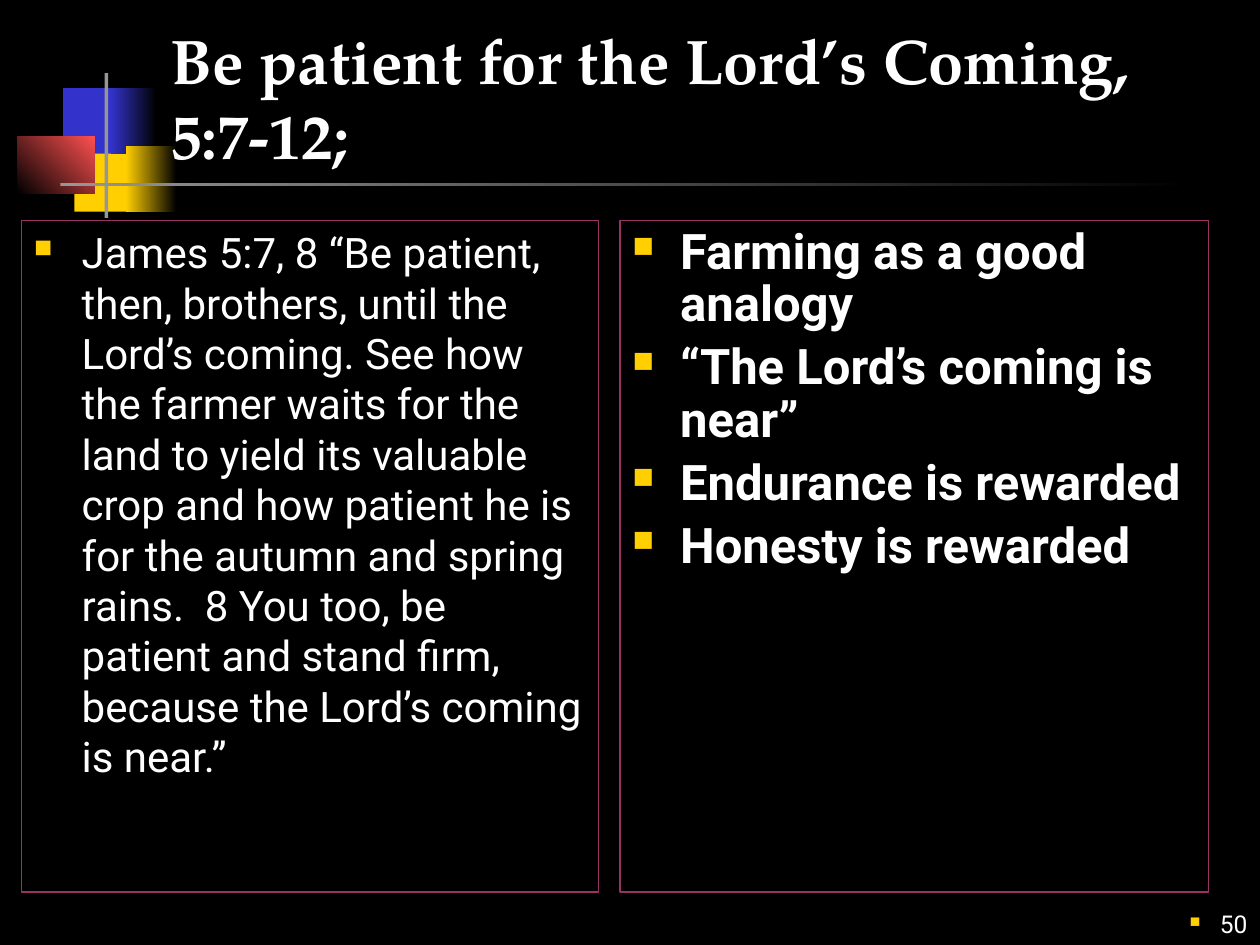
from dataclasses import dataclass

from lxml import etree
from pptx import Presentation
from pptx.dml.color import RGBColor
from pptx.enum.shapes import MSO_SHAPE
from pptx.enum.text import MSO_ANCHOR, MSO_AUTO_SIZE, PP_ALIGN
from pptx.oxml.ns import qn
from pptx.util import Inches, Pt

RECTANGLE = MSO_SHAPE.RECTANGLE
TOP, BOTTOM = MSO_ANCHOR.TOP, MSO_ANCHOR.BOTTOM
LEFT, RIGHT = PP_ALIGN.LEFT, PP_ALIGN.RIGHT
NO_AUTOFIT = MSO_AUTO_SIZE.NONE
TITLE_ONLY = 5


@dataclass(frozen=True)
class Theme:
    background: str = "000000"
    text: str = "FFFFFF"
    yellow: str = "FFCF01"
    blue: str = "3333CC"
    red: str = "FF5050"
    gray: str = "969696"
    border: str = "993366"
    title_font: str = "TeX Gyre Pagella"
    body_font: str = "Roboto"
    title_size: int = 36
    points_size: int = 28
    verse_size: int = 24
    number_size: int = 14


def color(value):
    return RGBColor.from_string(value)


def add_bullet(para, bullet_color, indent):
    properties = para._p.get_or_add_pPr()
    properties.set("marL", str(Inches(indent)))
    properties.set("indent", str(-Inches(indent)))
    bullet = etree.SubElement(properties, qn("a:buClr"))
    etree.SubElement(bullet, qn("a:srgbClr"), val=bullet_color)
    etree.SubElement(properties, qn("a:buSzPct"), val="60000")
    etree.SubElement(properties, qn("a:buChar"), char="■")


def write_text(frame, lines, *, font, size, text_color, bold=False, align=LEFT,
               anchor=TOP, spacing=None, bullet_color=None, indent=0.38):
    frame.word_wrap = True
    frame.auto_size = NO_AUTOFIT
    frame.vertical_anchor = anchor
    for index, line in enumerate(lines):
        para = frame.add_paragraph() if index else frame.paragraphs[0]
        para.alignment = align
        if spacing:
            para.line_spacing = spacing
        if index:
            para.space_before = Pt(size * 0.2)
        if bullet_color:
            add_bullet(para, bullet_color, indent)
        span = para.add_run()
        span.text = line
        span.font.name = font
        span.font.size = Pt(size)
        span.font.bold = bold
        span.font.color.rgb = color(text_color)


class SlideBuilder:
    def __init__(self, page, theme):
        self.page = page
        self.theme = theme
        page.background.fill.solid()
        page.background.fill.fore_color.rgb = color(theme.background)

    def rectangle(self, place):
        box = self.page.shapes.add_shape(RECTANGLE, *map(Inches, place))
        box.shadow.inherit = False
        box.fill.background()
        box.line.fill.background()
        return box

    def block(self, place, fill):
        box = self.rectangle(place)
        box.fill.solid()
        box.fill.fore_color.rgb = color(fill)

    def fade(self, place, start, end, angle=0):
        box = self.rectangle(place)
        box.fill.gradient()
        box.fill.gradient_angle = angle
        for stop, value in zip(box.fill.gradient_stops, (start, end)):
            stop.color.rgb = color(value)

    def title(self, place, text):
        box = self.page.shapes.title
        box.left, box.top, box.width, box.height = map(Inches, place)
        self.page.shapes.element.append(box.element)
        write_text(box.text_frame, [text], font=self.theme.title_font,
                   size=self.theme.title_size, text_color=self.theme.text,
                   bold=True, anchor=BOTTOM)

    def panel(self, place, lines, size, **text_format):
        box = self.rectangle(place)
        box.line.color.rgb = color(self.theme.border)
        box.line.width = Pt(0.75)
        write_text(box.text_frame, lines, font=self.theme.body_font, size=size,
                   text_color=self.theme.text, bullet_color=self.theme.yellow,
                   **text_format)

    def page_number(self, place, number):
        box = self.page.shapes.add_textbox(*map(Inches, place))
        write_text(box.text_frame, [number], font=self.theme.body_font,
                   size=self.theme.number_size, text_color=self.theme.text,
                   align=RIGHT, anchor=BOTTOM,
                   bullet_color=self.theme.yellow, indent=0.24)


def main():
    deck = Presentation()
    deck.slide_width, deck.slide_height = Inches(10), Inches(7.5)
    theme = Theme()
    page = deck.slides.add_slide(deck.slide_layouts[TITLE_ONLY])
    slide = SlideBuilder(page, theme)

    slide.block((0.59, 1.16, 0.46, 0.52), theme.yellow)
    slide.block((0.5, 0.7, 0.48, 0.52), theme.blue)
    slide.fade((0.88, 0.7, 0.36, 0.52), theme.blue, theme.background)
    slide.fade((1, 1.16, 0.4, 0.52), theme.yellow, theme.background)
    slide.fade((0.14, 1.08, 0.61, 0.46), theme.background, theme.red, angle=45)
    slide.block((0.83, 0.58, 0.03, 1.15), theme.gray)
    slide.fade((0.48, 1.45, 9, 0.03), theme.gray, theme.background)

    slide.page_number((8.92, 7, 1.08, 0.5), "50")
    slide.title((1.25, 0.17, 8.52, 1.25),
                "Be patient for the Lord’s Coming, 5:7-12;")
    slide.panel((4.92, 1.75, 4.67, 5.33), [
        "Farming as a good analogy",
        "“The Lord’s coming is near”",
        "Endurance is rewarded",
        "Honesty is rewarded",
    ], theme.points_size, bold=True, spacing=0.9)
    slide.panel((0.17, 1.75, 4.58, 5.33), [
        "James 5:7, 8 “Be patient, then, brothers, until the Lord’s coming. "
        "See how the farmer waits for the land to yield its valuable crop and "
        "how patient he is for the autumn and spring rains.  8 You too, be "
        "patient and stand firm, because the Lord’s coming is near.”",
    ], theme.verse_size)

    deck.save("out.pptx")


if __name__ == "__main__":
    main()
